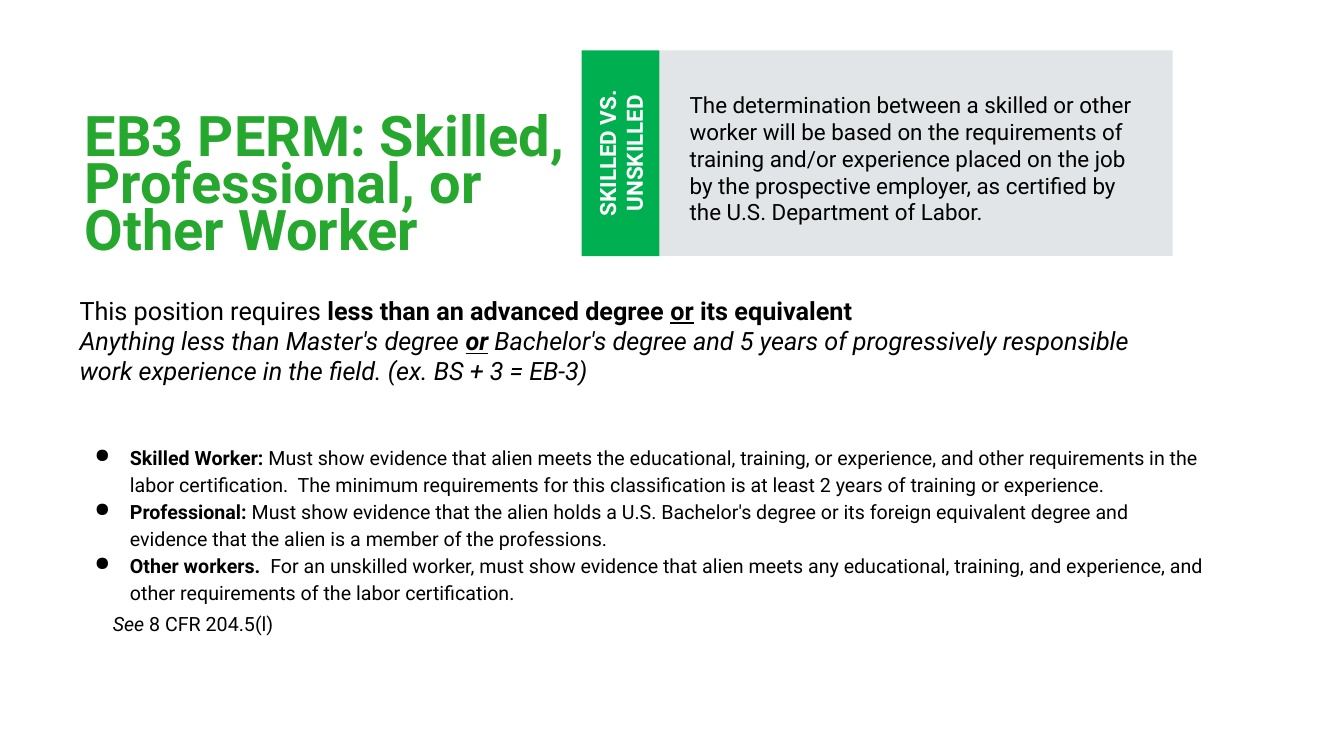
from lxml import etree
from pptx import Presentation
from pptx.dml.color import RGBColor
from pptx.enum.shapes import MSO_SHAPE
from pptx.enum.text import MSO_ANCHOR, MSO_AUTO_SIZE, PP_ALIGN
from pptx.oxml.ns import qn
from pptx.util import Inches, Pt

RECTANGLE = MSO_SHAPE.RECTANGLE
TOP, MIDDLE = MSO_ANCHOR.TOP, MSO_ANCHOR.MIDDLE
LEFT, CENTER = PP_ALIGN.LEFT, PP_ALIGN.CENTER
NO_AUTOFIT = MSO_AUTO_SIZE.NONE

FONT = "Roboto"
COLORS = {
    "background": "FFFFFF",
    "title": "26A72D",
    "band": "00B050",
    "panel": "DFE3E5",
    "text": "000000",
    "band_text": "FFFFFF",
}
SLIDE_WIDTH, SLIDE_HEIGHT = Inches(13.33), Inches(7.5)
CELL = SLIDE_HEIGHT / 75
NBSP = chr(160)

INTRO = [
    [("This position requires ", ""), ("less than an advanced degree ", "b"),
     ("or", "bu"), (" its equivalent", "b")],
    [("Anything less than Master's degree ", "i"), ("or", "biu"),
     (" Bachelor's degree and 5 years of progressively responsible "
      f"work{NBSP}experience in the field. (ex. BS + 3 = EB-3)", "i")],
]
CLASSES = [
    ("Skilled Worker:",
     " Must show evidence that alien meets the educational, training, or experience, "
     "and other requirements in the labor certification.  The minimum requirements "
     "for this classification is at least 2 years of training or experience."),
    ("Professional:",
     " Must show evidence that the alien holds a U.S. Bachelor's degree or its foreign "
     "equivalent degree and evidence that the alien is a member of the professions."),
    ("Other workers.",
     "  For an unskilled worker, must show evidence that alien meets any educational, "
     "training, and experience, and other requirements of the labor certification."),
]
CITATION = [("See", "i"), (" 8 CFR 204.5(l)", "")]


def cells(*counts):
    return [round(count * CELL) for count in counts]


def color(name):
    return RGBColor.from_string(COLORS[name])


def set_frame(shape, anchor, insets):
    frame = shape.text_frame
    frame.word_wrap = True
    frame.auto_size = NO_AUTOFIT
    frame.vertical_anchor = anchor
    (frame.margin_left, frame.margin_top,
     frame.margin_right, frame.margin_bottom) = cells(*insets)
    return frame


def set_font(paragraph, size, color_name, bold=None):
    font = paragraph.font
    font.name, font.size, font.bold = FONT, Pt(size), bold
    font.color.rgb = color(color_name)


def add_runs(paragraph, runs):
    for text, style in runs:
        run = paragraph.add_run()
        run.text = text
        run.font.bold = "b" in style
        run.font.italic = "i" in style
        run.font.underline = "u" in style


def set_indent(paragraph, left, first=0, bullet=None):
    properties = paragraph._p.get_or_add_pPr()
    left, first = cells(left, first)
    properties.set("marL", str(left))
    properties.set("indent", str(first))
    if bullet:
        bullet_color = etree.SubElement(properties, qn("a:buClr"))
        etree.SubElement(bullet_color, qn("a:srgbClr"), val=COLORS["text"])
        etree.SubElement(properties, qn("a:buChar"), char=bullet)


def add_title(slide, box):
    title = slide.shapes.title
    title.left, title.top, title.width, title.height = cells(*box)
    frame = set_frame(title, TOP, (0, 0.5, 0, 0))
    frame.text = "EB3 PERM: Skilled, Professional, or Other Worker"
    paragraph = frame.paragraphs[0]
    paragraph.alignment = LEFT
    paragraph.line_spacing = 0.7
    set_font(paragraph, 40, "title", True)


def add_block(slide, box, fill, text, text_color, alignment, insets, bold=None):
    block = slide.shapes.add_shape(RECTANGLE, *cells(*box))
    block.shadow.inherit = False
    block.fill.solid()
    block.fill.fore_color.rgb = color(fill)
    block.line.fill.background()
    frame = set_frame(block, MIDDLE, insets)
    frame.text = text
    frame.paragraphs[0].alignment = alignment
    set_font(frame.paragraphs[0], 16, text_color, bold)
    return block


def add_callout(slide, box):
    left, top, width, height = box
    band_width = 7.7
    panel = add_block(
        slide, (left + band_width, top, width - band_width, height), "panel",
        "The determination between a skilled or other worker will be based on the "
        "requirements of training and/or experience placed on the job by the "
        "prospective employer, as certified by the U.S. Department of Labor.",
        "text", LEFT, (3, 1, 3, 0))
    panel_color = panel.fill._xPr.find(".//" + qn("a:srgbClr"))
    etree.SubElement(panel_color, qn("a:alpha"), val="90000")
    shift = (height - band_width) / 2
    band = add_block(
        slide, (left - shift, top + shift, height, band_width), "band",
        "SKILLED VS. UNSKILLED", "band_text", CENTER, (0, 0, 0, 0), True)
    band.rotation = 270


def add_requirements(slide, box):
    frame = set_frame(slide.shapes.add_textbox(*cells(*box)), TOP, (1, 0.5, 1, 0.5))
    for index, runs in enumerate(INTRO):
        paragraph = frame.add_paragraph() if index else frame.paragraphs[0]
        set_font(paragraph, 18, "text")
        add_runs(paragraph, runs)
    for index, (name, description) in enumerate(CLASSES):
        paragraph = frame.add_paragraph()
        set_indent(paragraph, 5, -3.5, "●")
        paragraph.line_spacing = 1.15
        paragraph.space_before = Pt(0 if index else 40)
        set_font(paragraph, 14, "text")
        add_runs(paragraph, [(name, "b"), (description, "")])
    paragraph = frame.add_paragraph()
    set_indent(paragraph, 3.3)
    paragraph.line_spacing = 1.15
    paragraph.space_before = Pt(3)
    set_font(paragraph, 14, "text")
    add_runs(paragraph, CITATION)


def main():
    presentation = Presentation()
    presentation.slide_width, presentation.slide_height = SLIDE_WIDTH, SLIDE_HEIGHT
    slide = presentation.slides.add_slide(presentation.slide_layouts[5])
    slide.background.fill.solid()
    slide.background.fill.fore_color.rgb = color("background")
    add_requirements(slide, (6.9, 28.8, 113.9, 38.6))
    add_title(slide, (8.4, 11.3, 48.2, 7.9))
    add_callout(slide, (57.7, 5, 58.6, 20.4))
    presentation.save("out.pptx")


if __name__ == "__main__":
    main()
